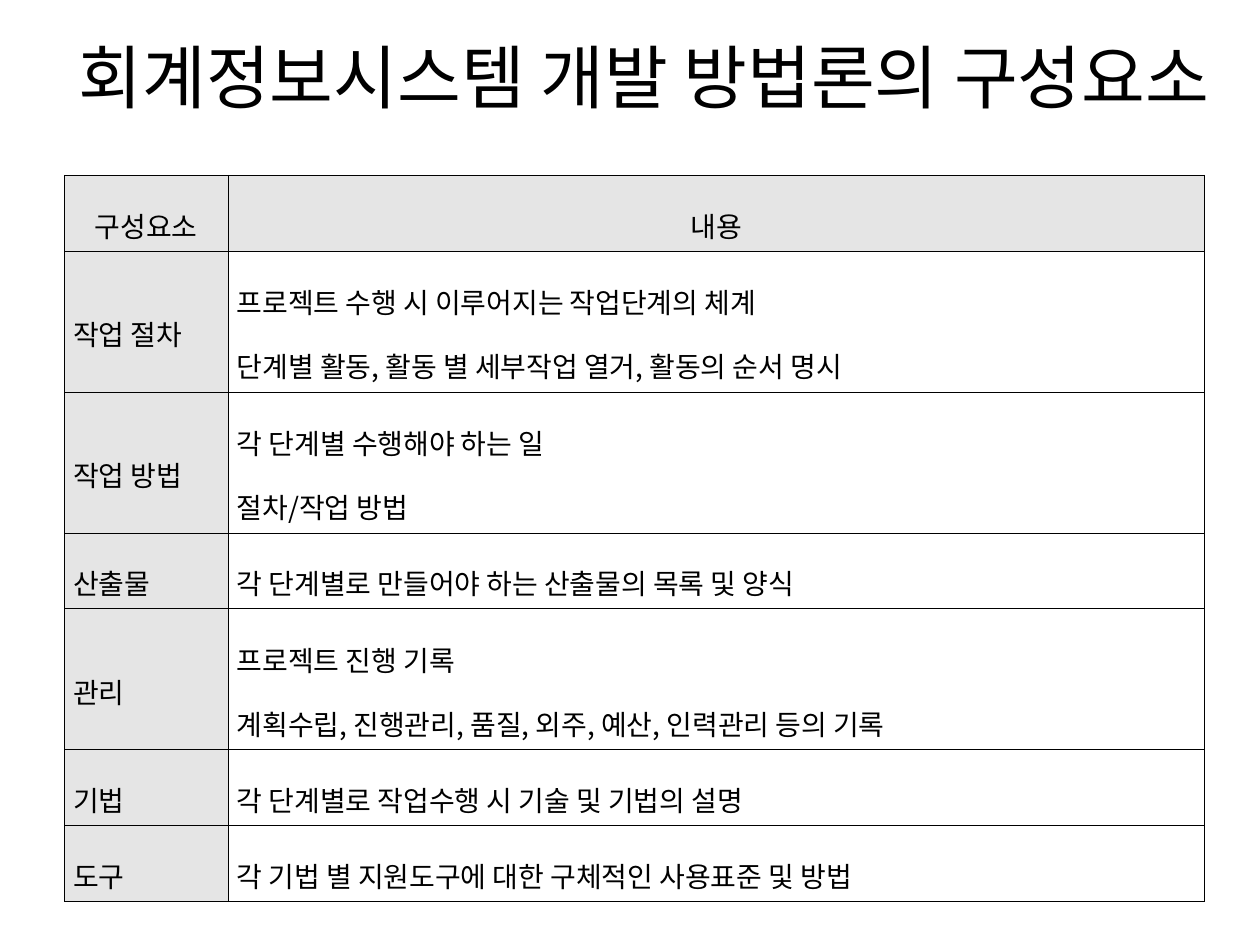
"""Build a slide listing the components of a development methodology."""
from lxml.etree import SubElement
from pptx import Presentation
from pptx.dml.color import RGBColor
from pptx.enum.text import MSO_ANCHOR, PP_ALIGN
from pptx.oxml.ns import qn
from pptx.util import Inches, Pt

FONT = "Noto Sans CJK KR"
COLORS = {"text": "000000", "border": "000000", "shade": "E5E5E5"}
TITLE = "회계정보시스템 개발 방법론의 구성요소"
ROWS = [
    ("구성요소", ["내용"]),
    ("작업 절차", ["프로젝트 수행 시 이루어지는 작업단계의 체계",
               "단계별 활동, 활동 별 세부작업 열거, 활동의 순서 명시"]),
    ("작업 방법", ["각 단계별 수행해야 하는 일", "절차/작업 방법"]),
    ("산출물", ["각 단계별로 만들어야 하는 산출물의 목록 및 양식"]),
    ("관리", ["프로젝트 진행 기록",
            "계획수립, 진행관리, 품질, 외주, 예산, 인력관리 등의 기록"]),
    ("기법", ["각 단계별로 작업수행 시 기술 및 기법의 설명"]),
    ("도구", ["각 기법 별 지원도구에 대한 구체적인 사용표준 및 방법"]),
]
COL_WIDTHS = (1.3, 7.75)
ROW_HEIGHTS = {1: 0.6, 2: 1.12}


def write_lines(tf, lines, size, align, spacing=None):
    for i, line in enumerate(lines):
        p = tf.paragraphs[0] if i == 0 else tf.add_paragraph()
        p.text = line
        p.alignment = align
        p.line_spacing = spacing
        p.font.size = Pt(size)
        p.font.name = FONT
        p.font.color.rgb = RGBColor.from_string(COLORS["text"])
        default = p.font.fill._xPr
        SubElement(default, qn("a:ea"), typeface=FONT)


def add_title(s):
    sp = s.shapes.add_textbox(Inches(0.5), Inches(0.3), Inches(9.22), Inches(1.25))
    tf = sp.text_frame
    tf.word_wrap = True
    tf.vertical_anchor = MSO_ANCHOR.MIDDLE
    tf.margin_top = Inches(0.05)
    tf.margin_bottom = Inches(0.7)
    write_lines(tf, [TITLE], 39.6, PP_ALIGN.CENTER)


def add_borders(cell):
    props = cell._tc.get_or_add_tcPr()
    for i, side in enumerate(("lnL", "lnR", "lnT", "lnB")):
        line = props.makeelement(qn(f"a:{side}"), {"w": str(Pt(0.28))})
        fill = SubElement(line, qn("a:solidFill"))
        SubElement(fill, qn("a:srgbClr"), val=COLORS["border"])
        props.insert(i, line)


def fill_cell(cell, lines, align, shaded):
    cell.margin_left = cell.margin_right = Inches(0.07)
    cell.margin_top = cell.margin_bottom = Inches(0.02)
    cell.vertical_anchor = MSO_ANCHOR.MIDDLE
    if shaded:
        cell.fill.solid()
        cell.fill.fore_color.rgb = RGBColor.from_string(COLORS["shade"])
    else:
        cell.fill.background()
    add_borders(cell)
    write_lines(cell.text_frame, lines, 16, align, 1.6)


def add_component_table(s):
    heights = [ROW_HEIGHTS[len(lines)] for _, lines in ROWS]
    table = s.shapes.add_table(
        len(ROWS), len(COL_WIDTHS), Inches(0.51), Inches(1.39),
        Inches(sum(COL_WIDTHS)), Inches(sum(heights))).table
    table.horz_banding = False
    table.first_row = False
    for col, width in zip(table.columns, COL_WIDTHS):
        col.width = Inches(width)
    for r, (name, lines) in enumerate(ROWS):
        table.rows[r].height = Inches(heights[r])
        align = PP_ALIGN.CENTER if r == 0 else PP_ALIGN.JUSTIFY
        fill_cell(table.cell(r, 0), [name], align, True)
        fill_cell(table.cell(r, 1), lines, align, r == 0)


def main():
    prs = Presentation()
    prs.slide_width, prs.slide_height = Inches(10), Inches(7.5)
    s = prs.slides.add_slide(prs.slide_layouts[6])
    add_title(s)
    add_component_table(s)
    prs.save("out.pptx")


if __name__ == "__main__":
    main()
